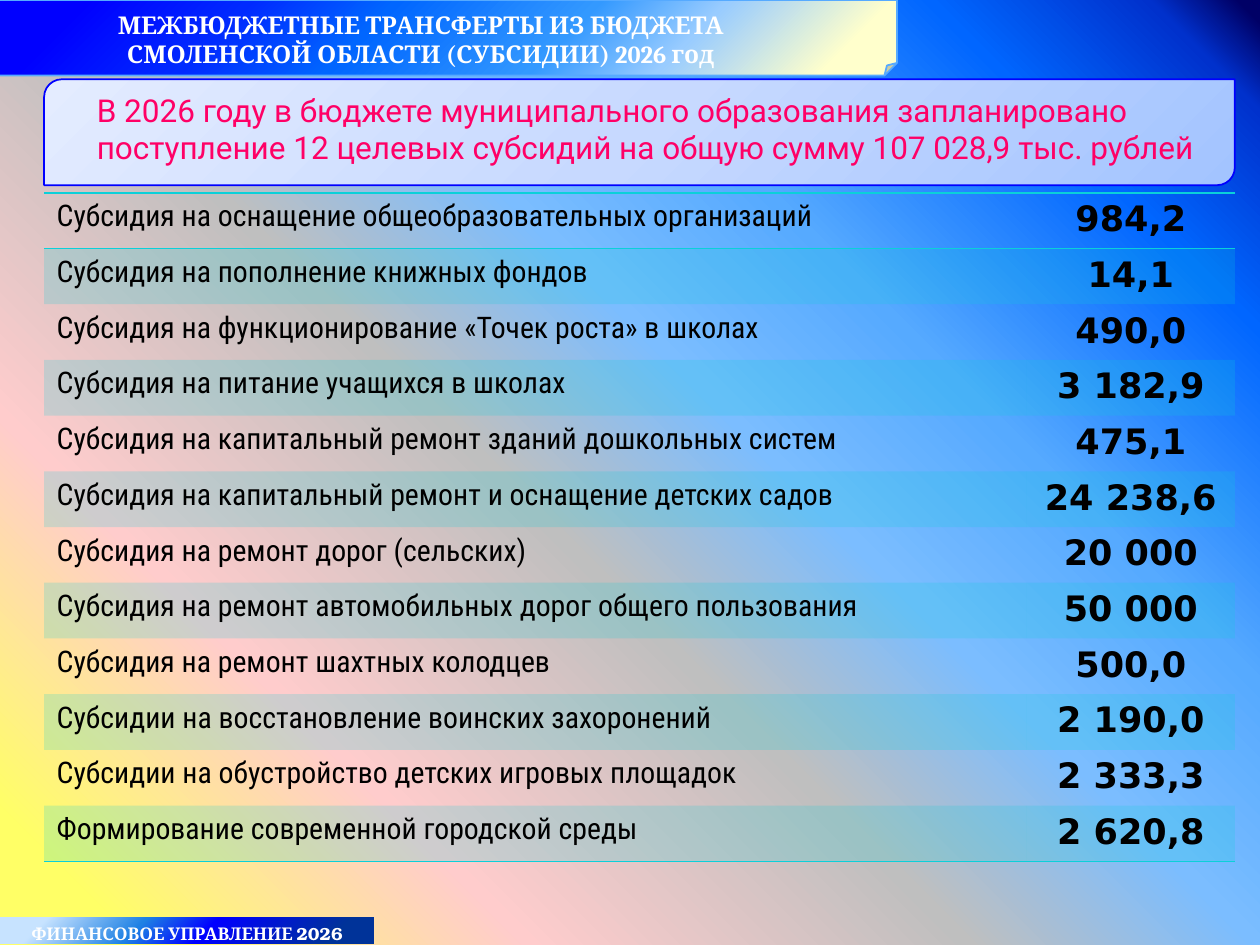
from lxml import etree
from pptx import Presentation
from pptx.dml.color import RGBColor
from pptx.enum.shapes import MSO_SHAPE
from pptx.enum.text import MSO_ANCHOR, PP_ALIGN
from pptx.oxml.ns import qn
from pptx.util import Inches, Pt

CENTER, LEFT = PP_ALIGN.CENTER, PP_ALIGN.LEFT
TOP, BOTTOM = MSO_ANCHOR.TOP, MSO_ANCHOR.BOTTOM
NO_STYLE_NO_GRID = "{2D5ABB26-0587-4C30-8999-92F81FD0307C}"

# Content
TITLE = "МЕЖБЮДЖЕТНЫЕ ТРАНСФЕРТЫ ИЗ БЮДЖЕТА СМОЛЕНСКОЙ ОБЛАСТИ (СУБСИДИИ) 2026 год"
SUMMARY = ("В 2026 году в бюджете муниципального образования запланировано "
           "поступление 12 целевых субсидий на общую сумму 107 028,9 тыс. рублей")
SUBSIDIES = [
    ("Субсидия на оснащение общеобразовательных организаций", "984,2"),
    ("Субсидия на пополнение книжных фондов", "14,1"),
    ("Субсидия на функционирование «Точек роста» в школах", "490,0"),
    ("Субсидия на питание учащихся в школах", "3 182,9"),
    ("Субсидия на капитальный ремонт зданий дошкольных систем", "475,1"),
    ("Субсидия на капитальный ремонт и оснащение детских садов", "24 238,6"),
    ("Субсидия на ремонт дорог (сельских)", "20 000"),
    ("Субсидия на ремонт автомобильных дорог общего пользования", "50 000"),
    ("Субсидия на ремонт шахтных колодцев", "500,0"),
    ("Субсидии на восстановление воинских захоронений", "2 190,0"),
    ("Субсидии на обустройство детских игровых площадок", "2 333,3"),
    ("Формирование современной городской среды", "2 620,8"),
]
FOOTER = ("ФИНАНСОВОЕ УПРАВЛЕНИЕ ", "2026")

COLORS = {"white": "FFFFFF", "black": "000000", "pink": "FF0066",
          "blue": "0000FF", "sky": "56AAFF", "teal": "0BD0D9"}
GRADIENTS = {
    "background": [(6, "FFFF66"), (24, "FFCCCC"), (44, "BFBFBF"), (57, "7BBDFF"),
                   (69, "56AAFF"), (85, "0066FF"), (95, "0031CC"), (99, "000066")],
    "title": [(9, "0000FF"), (26, "002AFF"), (41, "0066FF"), (62, "3399FF"),
              (75, "99CCFF"), (92, "FFFFCC"), (99, "FFFFCC"), (100, "FFFF00")],
    "summary": [(0, "A3C4FF"), (50, "C7D9FF"), (100, "E4ECFF")],
    "footer": [(12, "003399"), (45, "0000FF"), (63, "1E81E4"), (88, "C7E3FF")],
}


def add_color(parent, color):
    return etree.SubElement(parent, qn("a:srgbClr"), val=COLORS.get(color, color))


def set_gradient(fill, owner, stops, angle=None):
    """Linear at an angle, or circular from the bottom left without one."""
    fill.gradient()
    gradient = owner.find(qn("a:gradFill"))
    for child in list(gradient):
        gradient.remove(child)
    stop_list = etree.SubElement(gradient, qn("a:gsLst"))
    for position, color in stops:
        add_color(etree.SubElement(stop_list, qn("a:gs"), pos=str(position * 1000)), color)
    if angle is None:
        circle = etree.SubElement(gradient, qn("a:path"), path="circle")
        etree.SubElement(circle, qn("a:fillToRect"), t="100000", r="100000")
    else:
        etree.SubElement(gradient, qn("a:lin"), ang=str(angle * 60000), scaled="0")


def add_run(paragraph, text, font, size, color, bold=False):
    run = paragraph.add_run()
    run.text = text
    run.font.name, run.font.size, run.font.bold = font, Pt(size), bold
    run.font.color.rgb = RGBColor.from_string(COLORS[color])


def add_panel(slide, kind, box, stops, angle, line=None):
    shape = slide.shapes.add_shape(kind, *map(Inches, box))
    shape.shadow.inherit = False
    set_gradient(shape.fill, shape.element.spPr, stops, angle)
    if line:
        shape.line.color.rgb = RGBColor.from_string(COLORS[line])
        shape.line.width = Pt(1)
    else:
        shape.line.fill.background()
    return shape


def add_text(slide, box, align, *run):
    frame = slide.shapes.add_textbox(*map(Inches, box)).text_frame
    frame.word_wrap = True
    frame.vertical_anchor = TOP
    frame.paragraphs[0].alignment = align
    add_run(frame.paragraphs[0], *run)


def style_cell(cell, banded, edges):
    cell.fill.background()
    if banded:
        cell.fill.solid()
        cell.fill.fore_color.rgb = RGBColor.from_string(COLORS["teal"])
        color = cell._tc.tcPr.find(".//" + qn("a:srgbClr"))
        etree.SubElement(color, qn("a:alpha"), val="20000")
    for index, edge in enumerate(edges):
        border = etree.Element(qn("a:ln" + edge), w=str(Pt(1)))
        add_color(etree.SubElement(border, qn("a:solidFill")), "teal")
        cell._tc.tcPr.insert(index, border)


presentation = Presentation()
presentation.slide_width, presentation.slide_height = Inches(10), Inches(7.5)
slide = presentation.slides.add_slide(presentation.slide_layouts[6])

# Background
background_fill = slide.background.fill
background_fill.solid()
set_gradient(background_fill, slide.element.find(".//" + qn("p:bgPr")),
             GRADIENTS["background"])

# Title
add_panel(slide, MSO_SHAPE.FOLDED_CORNER, (-0.01, 0, 7.13, 0.6),
          GRADIENTS["title"], 45, "sky")
add_text(slide, (0.15, 0.03, 6.38, 0.57), CENTER, TITLE, "Cambria", 14, "white", True)

# Summary
add_panel(slide, MSO_SHAPE.ROUND_2_DIAG_RECTANGLE, (0.35, 0.63, 9.45, 0.84),
          GRADIENTS["summary"], 225, "blue")
add_text(slide, (0.67, 0.67, 9.13, 0.71), LEFT, SUMMARY, "Roboto", 18, "pink")

# Subsidy table
ROW_HEIGHT = 5.31 / len(SUBSIDIES)
table = slide.shapes.add_table(len(SUBSIDIES), 2, Inches(0.35), Inches(1.53),
                               Inches(9.45), Inches(5.31)).table
table.first_row = table.horz_banding = False
table._tbl.tblPr.find(qn("a:tableStyleId")).text = NO_STYLE_NO_GRID
for column, width in zip(table.columns, (7.8, 1.65)):
    column.width = Inches(width)
edges_by_row = {0: "TB", len(SUBSIDIES) - 1: "B"}
columns = [(LEFT, "Roboto Condensed", 17, False), (CENTER, "DejaVu Sans", 20, True)]
for row_index, texts in enumerate(SUBSIDIES):
    table.rows[row_index].height = Inches(ROW_HEIGHT)
    for column_index, (align, font, size, bold) in enumerate(columns):
        cell = table.cell(row_index, column_index)
        style_cell(cell, row_index % 2 == 1, edges_by_row.get(row_index, ""))
        paragraph = cell.text_frame.paragraphs[0]
        paragraph.alignment = align
        add_run(paragraph, texts[column_index], font, size, "black", bold)

# Footer
footer = add_panel(slide, MSO_SHAPE.RECTANGLE, (0, 7.28, 2.97, 0.21),
                   GRADIENTS["footer"], 225)
frame = footer.text_frame
frame.word_wrap = True
frame.vertical_anchor = BOTTOM
frame.margin_top = frame.margin_bottom = 0
frame.paragraphs[0].alignment = CENTER
for text, font in zip(FOOTER, ("Cambria", "TeX Gyre Bonum")):
    add_run(frame.paragraphs[0], text, font, 10, "white", True)

presentation.save("out.pptx")
